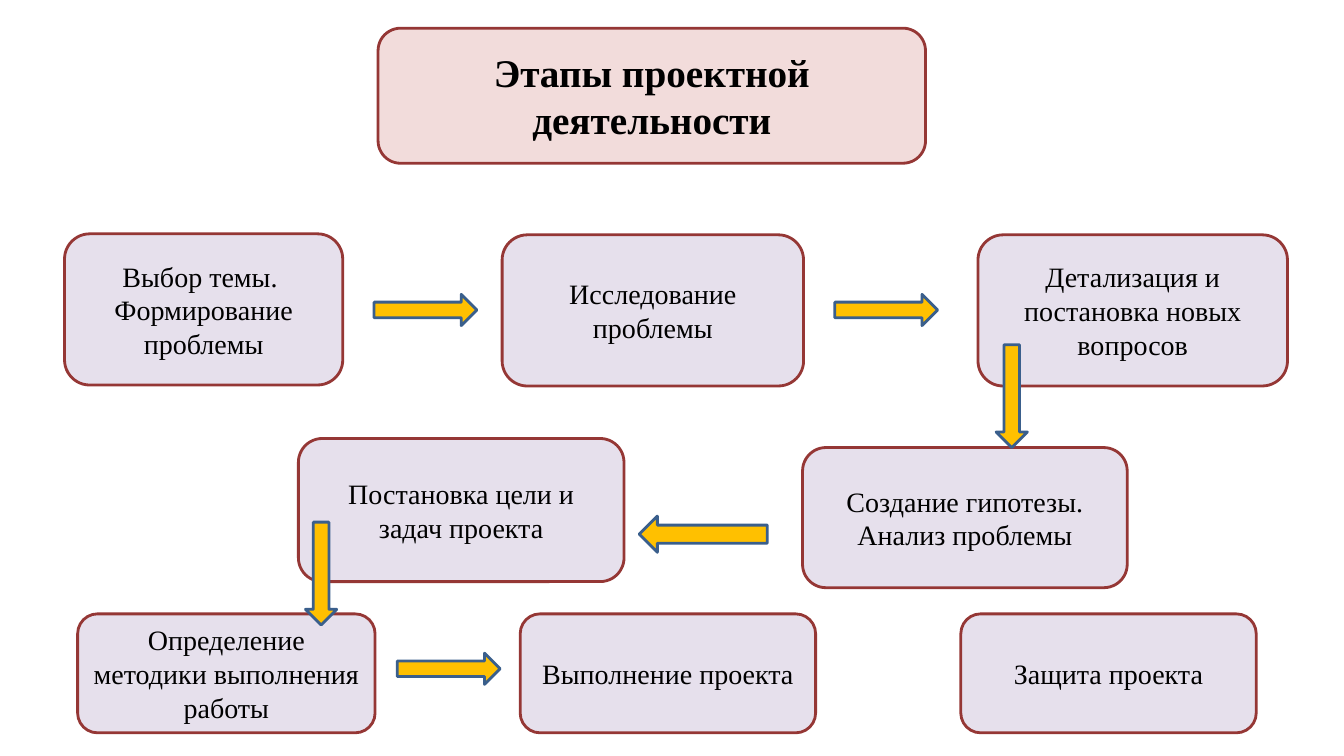
from pptx import Presentation
from pptx.dml.color import RGBColor
from pptx.enum.shapes import MSO_SHAPE
from pptx.enum.text import MSO_ANCHOR, PP_ALIGN
from pptx.util import Inches, Pt

ROUND = MSO_SHAPE.ROUNDED_RECTANGLE
RIGHT = MSO_SHAPE.RIGHT_ARROW
LEFT = MSO_SHAPE.LEFT_ARROW
DOWN = MSO_SHAPE.DOWN_ARROW
MIDDLE = MSO_ANCHOR.MIDDLE
CENTER = PP_ALIGN.CENTER

COLORS = {
    "title": "F2DCDB",
    "stage": "E6E0EC",
    "border": "953735",
    "arrow": "FFC000",
    "edge": "3A5F8C",
    "text": "000000",
}


class Deck:
    """Holds the style and the current slide."""

    font = {"name": "Times New Roman", "size": Pt(20), "bold": False}

    def __init__(self):
        self.prs = Presentation()
        self.prs.slide_width = Inches(13.33)
        self.prs.slide_height = Inches(7.5)
        self.slide = self.prs.slides.add_slide(self.prs.slide_layouts[6])

    def color(self, name):
        return RGBColor.from_string(COLORS[name])

    def shape(self, kind, place, fill, line):
        item = self.slide.shapes.add_shape(kind, *map(Inches, place))
        item.shadow.inherit = False
        item.fill.solid()
        item.fill.fore_color.rgb = self.color(fill)
        item.line.color.rgb = self.color(line)
        item.line.width = Pt(2)
        return item

    def box(self, text, place, fill="stage", **style):
        frame = self.shape(ROUND, place, fill, "border").text_frame
        frame.word_wrap = True
        frame.vertical_anchor = MIDDLE
        frame.text = text
        for para in frame.paragraphs:
            para.alignment = CENTER
            for run in para.runs:
                for key, value in {**self.font, **style}.items():
                    setattr(run.font, key, value)
                run.font.color.rgb = self.color("text")

    def arrow(self, kind, left, top, length=1.02, thick=0.31):
        size = (thick, length) if kind == DOWN else (length, thick)
        self.shape(kind, (left, top, *size), "arrow", "edge")


def main():
    deck = Deck()

    # Title
    deck.box("Этапы проектной деятельности", (3.75, 0.28, 5.43, 1.34),
             "title", size=Pt(28), bold=True)

    # Stages, in the order of the work
    stages = [
        ("Выбор темы. \nФормирование проблемы", (0.64, 2.32, 2.76, 1.5)),
        ("Исследование проблемы", (4.98, 2.33, 2.99, 1.5)),
        ("Детализация и постановка новых вопросов", (9.7, 2.33, 3.07, 1.5)),
        ("Создание гипотезы. Анализ проблемы", (7.96, 4.44, 3.22, 1.39)),
        ("Постановка цели и задач проекта", (2.96, 4.35, 3.23, 1.42)),
        ("Определение методики выполнения работы", (0.77, 6.09, 2.95, 1.18)),
        ("Выполнение проекта", (5.16, 6.09, 2.93, 1.18)),
        ("Защита проекта", (9.53, 6.09, 2.93, 1.18)),
    ]
    for text, place in stages:
        deck.box(text, place)

    # Arrows between the stages
    deck.arrow(RIGHT, 3.71, 2.92)
    deck.arrow(RIGHT, 8.28, 2.92)
    deck.arrow(DOWN, 9.88, 3.42)
    deck.arrow(LEFT, 6.34, 5.12, length=1.27, thick=0.36)
    deck.arrow(DOWN, 3.03, 5.18)
    deck.arrow(RIGHT, 3.94, 6.48)

    deck.prs.save("out.pptx")


if __name__ == "__main__":
    main()
